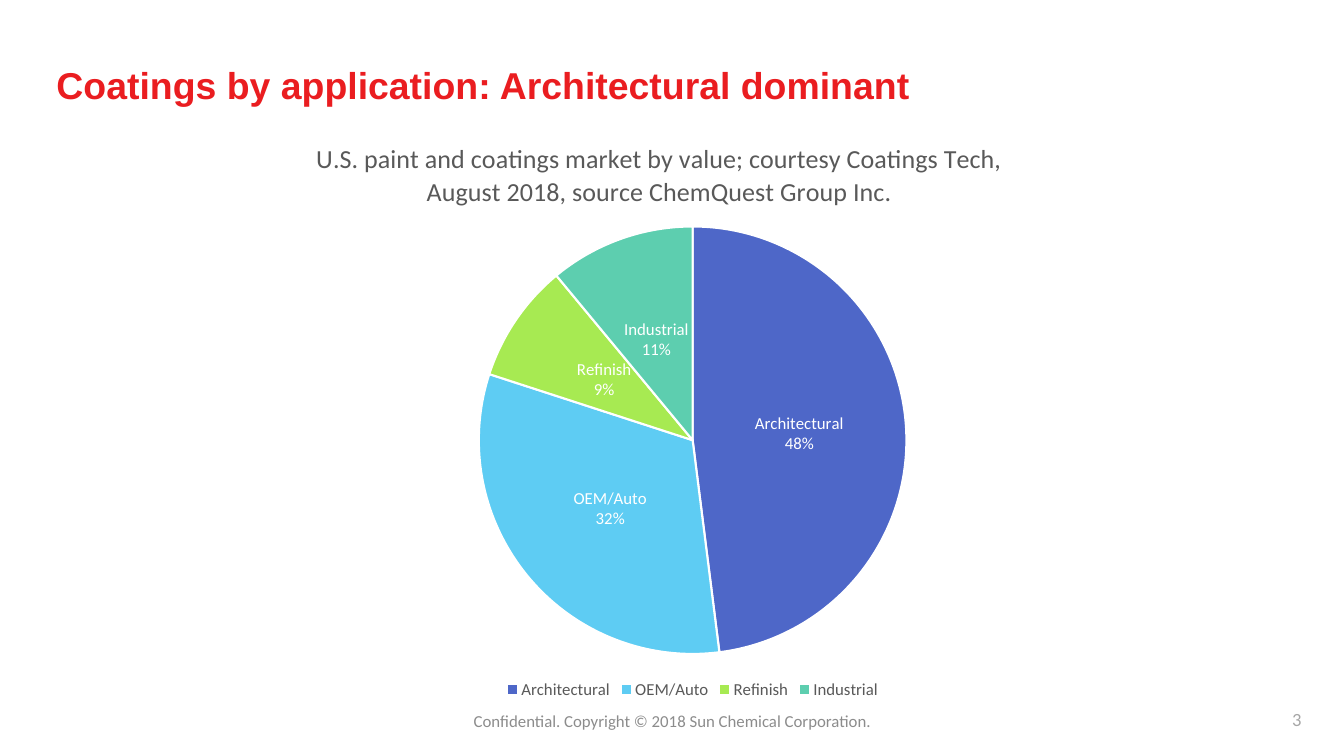
from lxml import etree
from pptx import Presentation
from pptx.chart.data import CategoryChartData
from pptx.dml.color import RGBColor
from pptx.enum.chart import XL_CHART_TYPE, XL_LABEL_POSITION, XL_LEGEND_POSITION
from pptx.enum.text import MSO_ANCHOR, PP_ALIGN
from pptx.oxml import parse_xml
from pptx.oxml.ns import nsdecls, qn
from pptx.util import Inches, Pt

SEGMENTS = [
    ("Architectural", 48, "4E67C8"),
    ("OEM/Auto", 32, "5ECCF3"),
    ("Refinish", 9, "A7EA52"),
    ("Industrial", 11, "5DCEAF"),
]
CHART_TITLE = ("U.S. paint and coatings market by value; courtesy Coatings Tech, "
               "August 2018, source ChemQuest Group Inc.")


def color(value):
    return RGBColor.from_string(value)


def style(font, size, fill, name="Calibri", bold=False):
    font.name = name
    font.size = Pt(size)
    font.bold = bold
    font.color.rgb = color(fill)


def place(sp, left, top, width, height):
    sp.left, sp.top = Inches(left), Inches(top)
    sp.width, sp.height = Inches(width), Inches(height)


def write(sp, text, align, size, fill, name="Calibri", bold=False):
    tf = sp.text_frame
    tf.word_wrap = True
    tf.vertical_anchor = MSO_ANCHOR.MIDDLE
    p = tf.paragraphs[0]
    p.alignment = align
    r = p.add_run()
    r.text = text
    style(r.font, size, fill, name, bold)


def add_label(s, box, text, align, size, fill):
    sp = s.shapes.add_textbox(*map(Inches, box))
    write(sp, text, align, size, fill)
    return sp


def set_layout(parent, before, **settings):
    for old in parent.findall(qn("c:layout")):
        parent.remove(old)
    layout = parse_xml(f"<c:layout {nsdecls('c')}><c:manualLayout/></c:layout>")
    for tag, value in settings.items():
        etree.SubElement(layout[0], qn(f"c:{tag}")).set("val", str(value))
    parent.find(qn(before)).addprevious(layout)


def add_pie(s):
    data = CategoryChartData()
    data.categories = [name for name, _, _ in SEGMENTS]
    data.add_series("Series 1", [value for _, value, _ in SEGMENTS])
    box = map(Inches, (2.26, 1.11, 9.22, 5.87))
    chart = s.shapes.add_chart(XL_CHART_TYPE.PIE, *box, data).chart
    style(chart.font, 10, "000000")

    chart.has_title = True
    r = chart.chart_title.text_frame.paragraphs[0].add_run()
    r.text = CHART_TITLE
    style(r.font, 18.6, "595959")
    title = chart.chart_title._element
    set_layout(title, "c:overlay", xMode="edge", yMode="edge", x=0.09, y=0.04)

    chart.has_legend = True
    chart.legend.position = XL_LEGEND_POSITION.BOTTOM
    chart.legend.include_in_layout = False
    style(chart.legend.font, 12, "595959")

    plot = chart.plots[0]
    plot.vary_by_categories = True
    set_layout(plot._element.getparent(), "c:pieChart", layoutTarget="inner",
               xMode="edge", yMode="edge", x=0.27, y=0.19, w=0.46, h=0.73)
    for i, (_, _, fill) in enumerate(SEGMENTS):
        fmt = plot.series[0].points[i].format
        fmt.fill.solid()
        fmt.fill.fore_color.rgb = color(fill)
        fmt.line.color.rgb = color("FFFFFF")
        fmt.line.width = Pt(1.5)

    labels = plot.series[0].data_labels
    labels.show_value = False
    labels.show_category_name = True
    labels.show_percentage = True
    labels.position = XL_LABEL_POSITION.CENTER
    style(labels.font, 12, "FFFFFF")


def main():
    prs = Presentation()
    prs.slide_width, prs.slide_height = Inches(13.33), Inches(7.5)
    s = prs.slides.add_slide(prs.slide_layouts[5])
    add_pie(s)
    title = s.shapes.title
    place(title, 0.46, 0.56, 10.85, 0.55)
    write(title, "Coatings by application: Architectural dominant",
          PP_ALIGN.LEFT, 26.7, "EA1D20", "Arial", True)
    add_label(s, (4.42, 6.95, 4.5, 0.4),
              "Confidential. Copyright © 2018 Sun Chemical Corporation.",
              PP_ALIGN.CENTER, 12, "8C8C8C")
    number = add_label(s, (9.93, 6.93, 3.11, 0.4), "3", PP_ALIGN.RIGHT, 13.3, "A6A6A6")
    number.text_frame.margin_right = Inches(0.13)
    prs.save("out.pptx")


if __name__ == "__main__":
    main()
